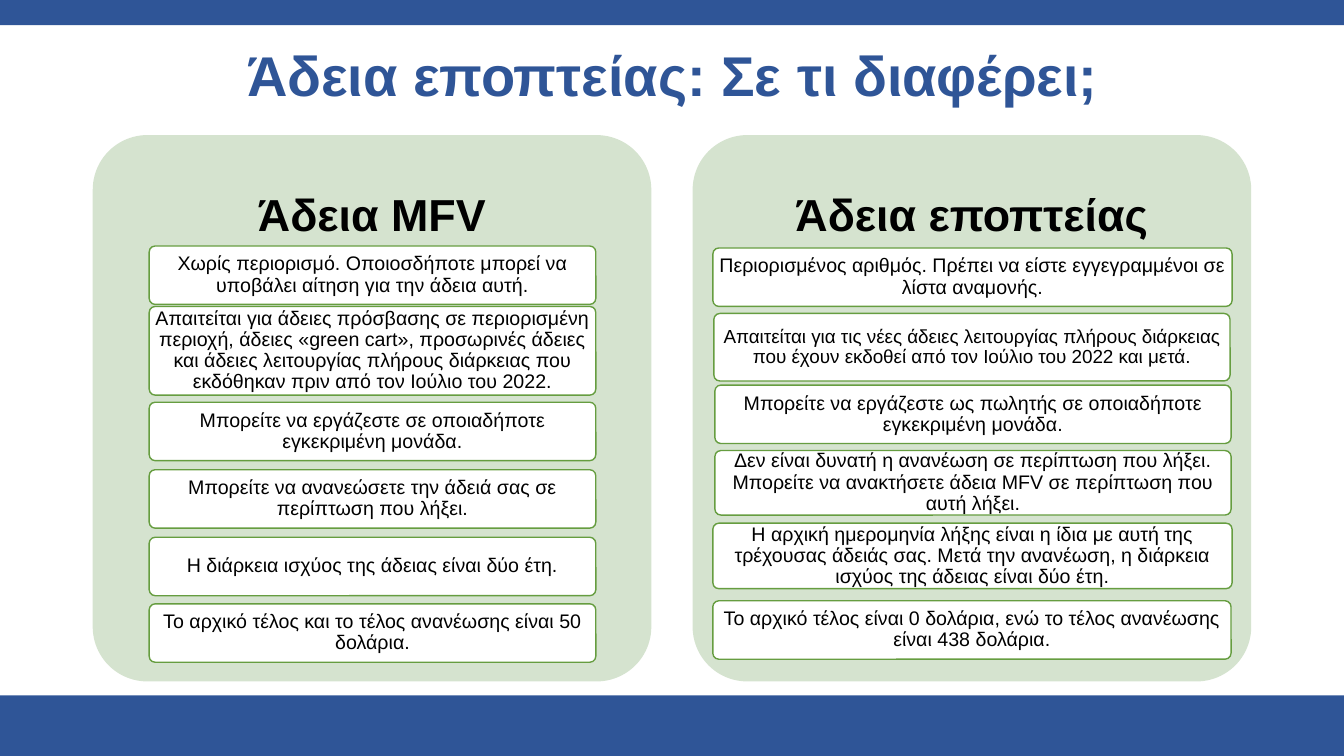
from pptx import Presentation
from pptx.dml.color import RGBColor
from pptx.enum.shapes import MSO_SHAPE
from pptx.enum.text import MSO_ANCHOR, PP_ALIGN
from pptx.util import Inches, Pt

BLUE, GREEN, PALE, WHITE, BLACK = "2F5597", "669D40", "D5E3CF", "FFFFFF", "000000"
WIDE, HIGH = 13.33, 7.5
PANEL_W, PANEL_H = 5.54, 5.42

PERMIT = [
    (0.56, 1.1, 4.43, 0.58, 14, "Χωρίς περιορισμό. Οποιοσδήποτε μπορεί να υποβάλει αίτηση για την άδεια αυτή."),
    (0.56, 1.7, 4.43, 0.88, 14, "Απαιτείται για άδειες πρόσβασης σε περιορισμένη περιοχή, άδειες «green cart», "
     "προσωρινές άδειες και άδειες λειτουργίας πλήρους διάρκειας που εκδόθηκαν πριν από τον Ιούλιο του 2022."),
    (0.56, 2.65, 4.43, 0.58, 14, "Μπορείτε να εργάζεστε σε οποιαδήποτε εγκεκριμένη μονάδα."),
    (0.56, 3.32, 4.43, 0.58, 14, "Μπορείτε να ανανεώσετε την άδειά σας σε περίπτωση που λήξει."),
    (0.56, 3.99, 4.43, 0.58, 14, "Η διάρκεια ισχύος της άδειας είναι δύο έτη."),
    (0.56, 4.65, 4.43, 0.58, 14, "Το αρχικό τέλος και το τέλος ανανέωσης είναι 50 δολάρια."),
]
LICENSE = [
    (0.2, 1.12, 5.15, 0.58, 14, "Περιορισμένος αριθμός. Πρέπει να είστε εγγεγραμμένοι σε λίστα αναμονής."),
    (0.21, 1.77, 5.12, 0.67, 13.5, "Απαιτείται για τις νέες άδειες λειτουργίας πλήρους διάρκειας "
     "που έχουν εκδοθεί από τον Ιούλιο του 2022 και μετά."),
    (0.22, 2.48, 5.12, 0.58, 14, "Μπορείτε να εργάζεστε ως πωλητής σε οποιαδήποτε εγκεκριμένη μονάδα."),
    (0.22, 3.13, 5.12, 0.64, 14, "Δεν είναι δυνατή η ανανέωση σε περίπτωση που λήξει. "
     "Μπορείτε να ανακτήσετε άδεια MFV σε περίπτωση που αυτή λήξει."),
    (0.2, 3.85, 5.15, 0.65, 14, "Η αρχική ημερομηνία λήξης είναι η ίδια με αυτή της τρέχουσας άδειάς σας. "
     "Μετά την ανανέωση, η διάρκεια ισχύος της άδειας είναι δύο έτη."),
    (0.2, 4.62, 5.14, 0.58, 14, "Το αρχικό τέλος είναι 0 δολάρια, ενώ το τέλος ανανέωσης είναι 438 δολάρια."),
]


def color(code):
    """Turn a hex string into a colour."""
    return RGBColor.from_string(code)


def add_box(slide, kind, box, fill, line=None):
    """Add a flat shape in the given box."""
    shape = slide.shapes.add_shape(kind, *map(Inches, box))
    shape.shadow.inherit = False
    shape.fill.solid()
    shape.fill.fore_color.rgb = color(fill)
    if line:
        shape.line.color.rgb = color(line)
        shape.line.width = Pt(1)
    else:
        shape.line.fill.background()
    return shape


def set_text(shape, text, size, ink, bold, pads):
    """Write one centred paragraph with left, top, right and bottom pads."""
    frame = shape.text_frame
    frame.word_wrap = True
    frame.vertical_anchor = MSO_ANCHOR.MIDDLE
    (frame.margin_left, frame.margin_top,
     frame.margin_right, frame.margin_bottom) = map(Inches, pads)
    frame.text = text
    para = frame.paragraphs[0]
    para.alignment = PP_ALIGN.CENTER
    para.line_spacing = 0.9
    font = para.font
    font.name, font.size, font.bold = "Arial", Pt(size), bold
    font.color.rgb = color(ink)


def add_title(slide, box, text):
    """Place and format the slide title."""
    title = slide.shapes.title
    title.left, title.top, title.width, title.height = map(Inches, box)
    set_text(title, text, 40, BLUE, True, (0.1, 0.05, 0.1, 0.05))


def add_panel(slide, box, head, cards):
    """Add a panel with a heading and its cards."""
    left, top, width, height = box
    panel = add_box(slide, MSO_SHAPE.ROUNDED_RECTANGLE, box, PALE)
    panel.adjustments[0] = 0.1
    set_text(panel, head, 32, BLACK, True, (0.13, 0.13, 0.13, 3.93))
    for right, down, wide, high, size, text in cards:
        card = add_box(slide, MSO_SHAPE.ROUNDED_RECTANGLE,
                       (left + right, top + down, wide, high), WHITE, GREEN)
        card.adjustments[0] = 0.06 / high
        set_text(card, text, size, BLACK, False, (0.04, 0.03, 0.04, 0.03))


def main():
    """Build and save the slide."""
    deck = Presentation()
    deck.slide_width, deck.slide_height = Inches(WIDE), Inches(HIGH)
    slide = deck.slides.add_slide(deck.slide_layouts[5])
    for top, high in ((0, 0.25), (6.9, 0.6)):
        add_box(slide, MSO_SHAPE.RECTANGLE, (0, top, WIDE, high), BLUE)
    add_title(slide, (0.92, 0.4, 11.5, 0.75), "Άδεια εποπτείας: Σε τι διαφέρει;")
    add_panel(slide, (0.92, 1.34, PANEL_W, PANEL_H), "Άδεια MFV", PERMIT)
    add_panel(slide, (6.87, 1.34, PANEL_W, PANEL_H), "Άδεια εποπτείας", LICENSE)
    deck.save("out.pptx")


if __name__ == "__main__":
    main()
